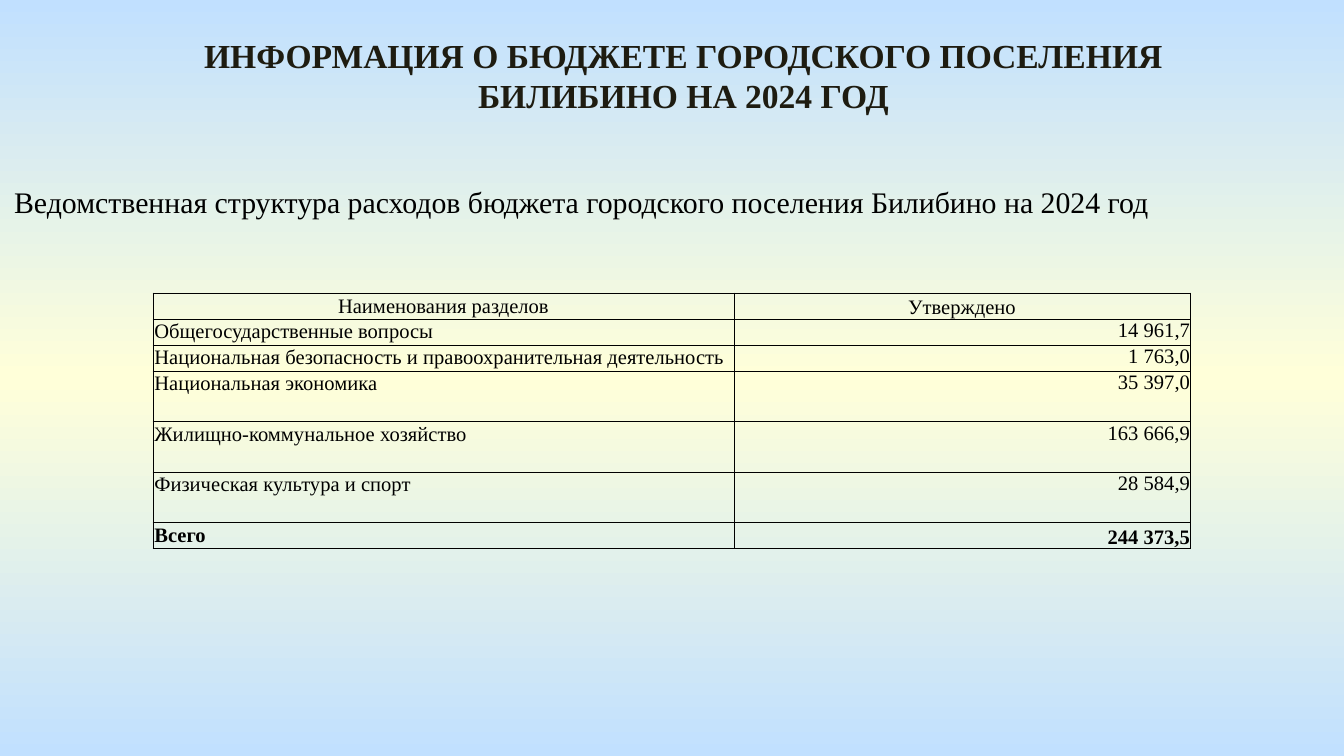
from copy import deepcopy
from typing import NamedTuple

from lxml.etree import SubElement as Sub
from pptx import Presentation
from pptx.dml.color import RGBColor
from pptx.enum.text import MSO_ANCHOR as Anchor, PP_ALIGN as Align
from pptx.oxml.ns import qn
from pptx.util import Pt

FONT = "Times New Roman"
BLACK = RGBColor(0x00, 0x00, 0x00)
DARK = RGBColor(0x1E, 0x1C, 0x11)
BLUE = RGBColor(0xC1, 0xE0, 0xFF)
CREAM = RGBColor(0xFF, 0xFF, 0xD9)


class Label(NamedTuple):
    text: str
    box: tuple[float, float, float, float]
    size: float
    color: RGBColor
    align: Align
    bold: bool = False


class Row(NamedTuple):
    name: str
    value: str
    height: float = 14
    head: bool = False
    total: bool = False


LABELS = [
    Label("ИНФОРМАЦИЯ О БЮДЖЕТЕ ГОРОДСКОГО ПОСЕЛЕНИЯ БИЛИБИНО НА 2024 ГОД",
          (88, 15, 556.5, 51), 18, DARK, Align.CENTER, True),
    Label("Ведомственная структура расходов бюджета городского поселения Билибино на 2024 год",
          (0.5, 95, 719, 46), 16, BLACK, Align.LEFT),
]
ROWS = [
    Row("Наименования разделов", "Утверждено", head=True),
    Row("Общегосударственные вопросы", "14 961,7"),
    Row("Национальная безопасность и правоохранительная деятельность", "1 763,0"),
    Row("Национальная экономика", "35 397,0", 27),
    Row("Жилищно-коммунальное хозяйство", "163 666,9", 27),
    Row("Физическая культура и спорт", "28 584,9", 27),
    Row("Всего", "244 373,5", total=True),
]
COLS = (311.2, 244.3)


def style(para, size: float, color: RGBColor, align: Align, bold: bool) -> None:
    para.alignment = align
    font = para.font
    font.name, font.size, font.bold = FONT, Pt(size), bold
    font.color.rgb = color


def paint(slide) -> None:
    fill = slide.background.fill
    fill.gradient()
    fill.gradient_angle = 270
    stops = next(slide.element.iter(qn("a:gsLst")))
    stops.insert(1, deepcopy(stops[0]))
    for stop, color, place in zip(fill.gradient_stops, (BLUE, CREAM, BLUE), (0, 0.5, 1)):
        stop.color.rgb = color
        stop.position = place


def add_label(slide, label: Label) -> None:
    frame = slide.shapes.add_textbox(*map(Pt, label.box)).text_frame
    frame.word_wrap = True
    frame.text = label.text
    style(frame.paragraphs[0], label.size, label.color, label.align, label.bold)


def add_lines(cell) -> None:
    props = cell._tc.get_or_add_tcPr()
    for side in "LRTB":
        line = Sub(props, qn(f"a:ln{side}"), w=str(Pt(0.5)))
        Sub(Sub(line, qn("a:solidFill")), qn("a:srgbClr"), val=str(BLACK))


def fill_cell(cell, text: str, align: Align, anchor: Anchor, pad: float, bold: bool) -> None:
    cell.text = text
    cell.vertical_anchor = anchor
    cell.margin_left = cell.margin_right = cell.margin_top = Pt(pad)
    cell.margin_bottom = Pt(0)
    style(cell.text_frame.paragraphs[0], 11, BLACK, align, bold)
    add_lines(cell)
    cell.fill.background()


def add_budget(slide, rows: list[Row]) -> None:
    high = sum(row.height for row in rows)
    table = slide.shapes.add_table(
        len(rows), len(COLS), Pt(82), Pt(157), Pt(sum(COLS)), Pt(high)).table
    table.first_row = table.horz_banding = False
    for col, width in zip(table.columns, COLS):
        col.width = Pt(width)
    for line, row in zip(table.rows, rows):
        line.height = Pt(row.height)
        name, value = line.cells
        low = Anchor.BOTTOM if row.head or row.total else Anchor.TOP
        fill_cell(name, row.name, Align.CENTER if row.head else Align.LEFT,
                  Anchor.MIDDLE if row.head else Anchor.TOP, 0.7, row.total)
        fill_cell(value, row.value, Align.CENTER if row.head else Align.RIGHT,
                  low, 0.7 if row.head else 0, row.total)


def main() -> None:
    """Build the budget slide and save it."""
    deck = Presentation()
    deck.slide_width, deck.slide_height = Pt(720), Pt(405)
    slide = deck.slides.add_slide(deck.slide_layouts[6])
    paint(slide)
    for label in LABELS:
        add_label(slide, label)
    add_budget(slide, ROWS)
    deck.save("out.pptx")


if __name__ == "__main__":
    main()
